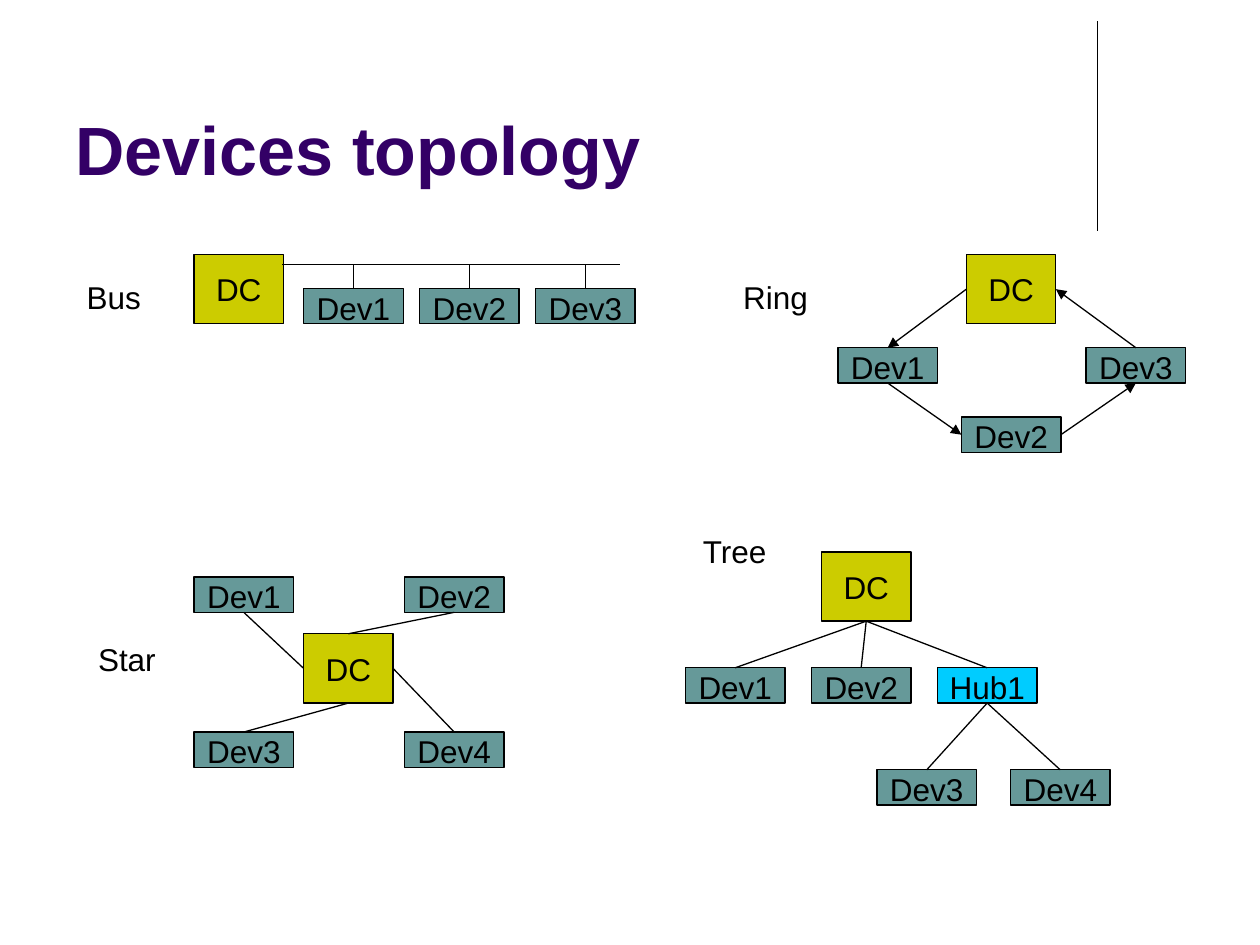
from lxml.etree import SubElement
from pptx import Presentation
from pptx.dml.color import RGBColor
from pptx.enum.shapes import MSO_CONNECTOR, MSO_SHAPE
from pptx.enum.text import MSO_ANCHOR, PP_ALIGN
from pptx.oxml.ns import qn
from pptx.util import Inches, Pt

BLACK = RGBColor(0x00, 0x00, 0x00)
PURPLE = RGBColor(0x33, 0x00, 0x66)
OLIVE = RGBColor(0xCC, 0xCC, 0x00)
TEAL = RGBColor(0x66, 0x99, 0x99)
CYAN = RGBColor(0x00, 0xCC, 0xFF)

TOP, LEFT, BOTTOM, RIGHT = range(4)
CONTROLLER_SIZE = (0.71, 0.55)
DEVICE_SIZE = (0.79, 0.28)
BUS_Y, BUS_START, BUS_END = 2.1, 2.24, 4.92
BUS_DEVICES = [f"Dev{number}" for number in (1, 2, 3)]

# Content: label (text, left, top, width), node positions, links between sides
TOPOLOGIES = [
    {
        "label": ("Bus", 0.59, 2.16, 0.64),
        "nodes": {"DC": (1.54, 2.02)}
        | {name: (2.41 + 0.92 * column, 2.29) for column, name in enumerate(BUS_DEVICES)},
        "links": [],
    },
    {
        "label": ("Ring", 5.8, 2.16, 0.72),
        "nodes": {"DC": (7.67, 2.02), "Dev1": (6.65, 2.76),
                  "Dev2": (7.63, 3.31), "Dev3": (8.62, 2.76)},
        "links": [("DC", LEFT, "Dev1", TOP), ("Dev1", BOTTOM, "Dev2", LEFT),
                  ("Dev2", RIGHT, "Dev3", BOTTOM), ("Dev3", TOP, "DC", RIGHT)],
        "arrows": True,
    },
    {
        "label": ("Star", 0.68, 5.03, 0.66),
        "nodes": {"DC": (2.41, 5.03)}
        | {f"Dev{2 * row + column + 1}": (1.54 + 1.67 * column, 4.58 + 1.23 * row)
           for row in range(2) for column in range(2)},
        "links": [("DC", LEFT, "Dev1", BOTTOM), ("DC", BOTTOM, "Dev3", TOP),
                  ("DC", RIGHT, "Dev4", TOP), ("DC", TOP, "Dev2", BOTTOM)],
    },
    {
        "label": ("Tree", 5.48, 4.17, 0.71),
        "nodes": {"DC": (6.52, 4.38)}
        | {name: (5.44 + column, 5.3) for column, name in enumerate(["Dev1", "Dev2", "Hub1"])}
        | {"Dev3": (6.96, 6.11), "Dev4": (8.02, 6.11)},
        "links": [("DC", BOTTOM, name, TOP) for name in ("Dev1", "Dev2", "Hub1")]
        + [("Hub1", BOTTOM, name, TOP) for name in ("Dev3", "Dev4")],
    },
]


def write(shape, text, frame_format, size=18, color=BLACK, bold=False, align=PP_ALIGN.LEFT):
    frame = shape.text_frame
    for name, value in frame_format.items():
        setattr(frame, name, value)
    para = frame.paragraphs[0]
    para.alignment = align
    span = para.add_run()
    span.text = text
    for name, value in {"name": "Arial", "size": Pt(size), "bold": bold}.items():
        setattr(span.font, name, value)
    span.font.color.rgb = color


def add_text(page, text, left, top, width, height, frame_format, **font_format):
    box = page.shapes.add_textbox(*map(Inches, (left, top, width, height)))
    write(box, text, frame_format, **font_format)


def add_node(page, name, left, top):
    is_controller = name == "DC"
    size = CONTROLLER_SIZE if is_controller else DEVICE_SIZE
    node = page.shapes.add_shape(MSO_SHAPE.RECTANGLE, *map(Inches, (left, top, *size)))
    node.shadow.inherit = False
    node.fill.solid()
    node.fill.fore_color.rgb = {"DC": OLIVE, "Hub1": CYAN}.get(name, TEAL)
    node.line.color.rgb = BLACK
    node.line.width = Pt(0.75)
    frame_format = {"word_wrap": False, "vertical_anchor": MSO_ANCHOR.MIDDLE}
    if not is_controller:
        frame_format |= {"vertical_anchor": MSO_ANCHOR.TOP, "margin_top": 0, "margin_bottom": 0}
    write(node, name, frame_format, align=PP_ALIGN.CENTER)
    return node


def add_line(page, start=(0, 0), end=(0, 0), arrow=False):
    line = page.shapes.add_connector(MSO_CONNECTOR.STRAIGHT, *map(Inches, (*start, *end)))
    line.line.color.rgb = BLACK
    line.line.width = Pt(0.75)
    if arrow:
        SubElement(line.line._get_or_add_ln(), qn("a:tailEnd"), type="triangle")
    SubElement(line._element.spPr, qn("a:effectLst"))
    return line


def add_topology(page, label, nodes, links, arrows=False):
    text, left, top, width = label
    add_text(page, text, left, top, width, 0.4, {"word_wrap": False})
    shapes = {name: add_node(page, name, *place) for name, place in nodes.items()}
    for source, source_side, target, target_side in links:
        link = add_line(page, arrow=arrows)
        link.begin_connect(shapes[source], source_side)
        link.end_connect(shapes[target], target_side)
    return shapes


def main():
    deck = Presentation()
    deck.slide_width, deck.slide_height = Inches(10), Inches(7.5)
    page = deck.slides.add_slide(deck.slide_layouts[6])

    # Title and decorative rule
    add_line(page, (8.71, 0.17), (8.71, 1.83))
    add_text(page, "Devices topology", 0.5, 0.13, 8.25, 1.42,
             {"word_wrap": True, "vertical_anchor": MSO_ANCHOR.BOTTOM},
             size=39, color=PURPLE, bold=True)

    # Four topologies
    bus, *_ = [add_topology(page, **topology) for topology in TOPOLOGIES]

    # Bus line with a drop to each device
    add_line(page, (BUS_START, BUS_Y), (BUS_END, BUS_Y))
    for name in BUS_DEVICES:
        center = bus[name].left.inches + DEVICE_SIZE[0] / 2
        drop = add_line(page, (center, BUS_Y), (center, BUS_Y))
        drop.begin_connect(bus[name], TOP)

    deck.save("out.pptx")


if __name__ == "__main__":
    main()
